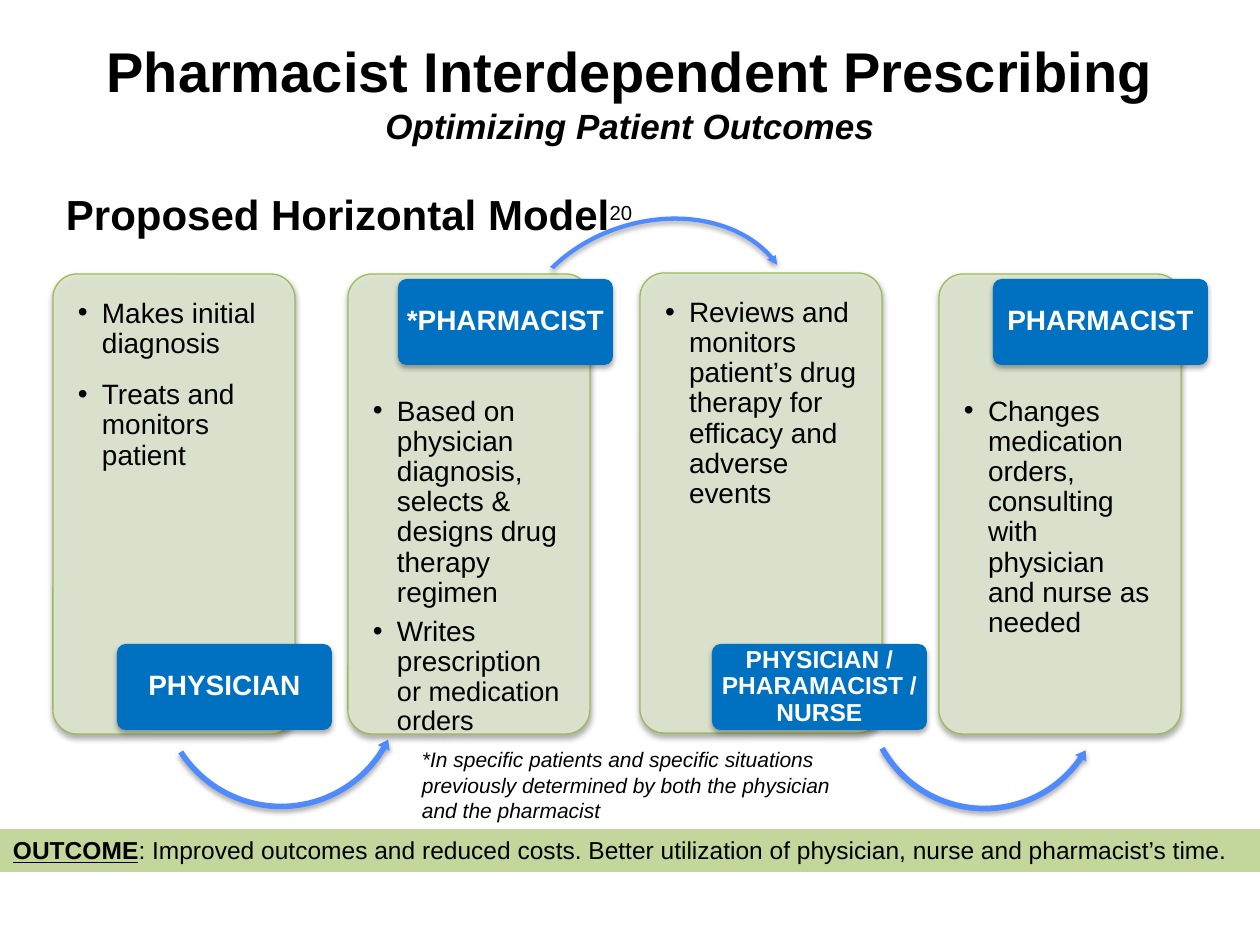
from dataclasses import dataclass

from lxml.etree import SubElement
from pptx import Presentation
from pptx.dml.color import RGBColor as RGB
from pptx.enum.shapes import MSO_SHAPE as SHAPE
from pptx.enum.text import MSO_ANCHOR as ANCHOR, MSO_AUTO_SIZE as AUTO, PP_ALIGN as ALIGN
from pptx.oxml.ns import qn
from pptx.util import Emu, Pt


@dataclass(frozen=True)
class Theme:
    """Colours, font and type sizes of the slide."""
    font: str = "Arial"
    ink: str = "000000"
    white: str = "FFFFFF"
    card: str = "DEE7D1"
    edge: str = "9BBB59"
    label: str = "0070C0"
    arrow: str = "4F8AFF"
    band: str = "C3D69B"
    title: float = 32
    heading: float = 24
    subtitle: float = 20
    body: float = 16
    tight: float = 15.5
    small: float = 14
    note: float = 12


T = Theme()
UP, DOWN = SHAPE.CIRCULAR_ARROW, SHAPE.LEFT_CIRCULAR_ARROW
STAGES = [
    dict(box=(53, 274, 242, 460), text_top=18, gap=12,
         bullets=[[("Makes initial diagnosis", T.body)], [("Treats and monitors patient", T.body)]],
         label=("PHYSICIAN", T.body, 64, 370),
         arrow=(DOWN, (102, 287, 252, 252), 19.4, (0.022, 2.676, 6.779, 76.593, 0.026))),
    dict(box=(348, 274, 242, 460), text_top=116, gap=5,
         bullets=[[("Based on physician diagnosis, selects & designs drug therapy regimen", T.body)],
                  [("Writes prescription ", T.body), ("or medication orders", T.tight)]],
         label=("*PHARMACIST", T.body, 50, 5),
         arrow=(UP, (160, -57, 292, 226), 342.6, (0.019, 2.289, 207.42, 137.219, 0.022))),
    dict(box=(640, 273, 242, 460), text_top=18, gap=0,
         bullets=[[("Reviews and monitors patient’s drug therapy for efficacy and adverse events", T.body)]],
         label=("PHYSICIAN / PHARAMACIST / NURSE", T.small, 72, 371),
         arrow=(DOWN, (221, 295, 247, 247), 23.8, (0.023, 2.727, 6.555, 76.318, 0.026))),
    dict(box=(939, 274, 242, 460), text_top=116, gap=0,
         bullets=[[("Changes medication orders, consulting with physician and nurse as needed", T.body)]],
         label=("PHARMACIST", T.body, 54, 5), arrow=None),
]


def px(n):
    """Turn slide pixels into EMU."""
    return Emu(round(n * 914400 / 126))


def apply(obj, fmt):
    """Set each format value on an object."""
    for name, value in fmt.items():
        setattr(obj, name, value)


def place(s, box):
    """Move a shape to a pixel box."""
    apply(s, dict(zip(("left", "top", "width", "height"), map(px, box))))


def frame(s, inset=(13, 6, 13, 6), anchor=ANCHOR.TOP):
    """Prepare the text frame of a shape."""
    tf = s.text_frame
    sides = ("margin_left", "margin_top", "margin_right", "margin_bottom")
    apply(tf, dict(zip(sides, map(px, inset)), word_wrap=True,
                   auto_size=AUTO.NONE, vertical_anchor=anchor))
    return tf


def add_run(p, text, size, color=T.ink, **fmt):
    """Add one formatted run to a paragraph."""
    r = p.add_run()
    r.text = text
    apply(r.font, dict(name=T.font, size=Pt(size), **fmt))
    r.font.color.rgb = RGB.from_string(color)
    return r


def add_solid(slide, kind, box, color, shadow=True):
    """Add a filled preset shape without an outline."""
    s = slide.shapes.add_shape(kind, *map(px, box))
    s.shadow.inherit = False
    s.fill.solid()
    s.fill.fore_color.rgb = RGB.from_string(color)
    s.line.fill.background()
    if shadow:
        effects = s._element.spPr.find(qn("a:effectLst"))
        outer = SubElement(effects, qn("a:outerShdw"), blurRad="40000", dist="23000",
                           dir="5400000", rotWithShape="0")
        black = SubElement(outer, qn("a:srgbClr"), val=T.ink)
        SubElement(black, qn("a:alpha"), val="35000")
    return s


def add_text(slide, box):
    """Add a text box and return its first paragraph."""
    return frame(slide.shapes.add_textbox(*map(px, box))).paragraphs[0]


def add_bullet(p):
    """Give a paragraph a hanging bullet."""
    pPr = p._p.get_or_add_pPr()
    pPr.set("marL", str(px(24)))
    pPr.set("indent", str(-px(24)))
    SubElement(pPr, qn("a:buFont"), typeface=T.font)
    SubElement(pPr, qn("a:buChar"), char="•")


def add_header(slide, box):
    """Place the title, subtitle and model heading."""
    x, y, w, h = box
    title = slide.shapes.title
    place(title, (x, y, w, 98))
    p = frame(title, anchor=ANCHOR.MIDDLE).paragraphs[0]
    p.alignment = ALIGN.CENTER
    add_run(p, "Pharmacist Interdependent Prescribing", T.title, bold=True)
    p = add_text(slide, (x, y + 77, w, 55))
    p.alignment = ALIGN.CENTER
    add_run(p, "Optimizing Patient Outcomes", T.subtitle, bold=True, italic=True)
    p = add_text(slide, (x + 53, y + 162, w - 126, 60))
    add_run(p, "Proposed Horizontal Model", T.heading, bold=True)
    r = add_run(p, "20", T.subtitle, bold=False)
    r._r.get_or_add_rPr().set("baseline", "30000")


def add_card(slide, box, text_top, gap, bullets):
    """Place a rounded card with its bullets."""
    s = add_solid(slide, SHAPE.ROUNDED_RECTANGLE, box, T.card)
    s.adjustments[0] = 0.1
    color = s._element.spPr.find(qn("a:solidFill"))[0]
    SubElement(color, qn("a:alpha"), val="90000")
    s.line.color.rgb = RGB.from_string(T.edge)
    s.line.width = Pt(0.75)
    tf = frame(s, (18, text_top, 18, 0))
    for i, runs in enumerate(bullets):
        p = tf.add_paragraph() if i else tf.paragraphs[0]
        add_bullet(p)
        apply(p, dict(alignment=ALIGN.LEFT, line_spacing=0.9, space_before=Pt(gap if i else 0)))
        for text, size in runs:
            add_run(p, text, size)


def add_stage(slide, box, text_top, gap, bullets, label, arrow):
    """Place a card, the arrow leaving it and its role label."""
    x, y = box[:2]
    add_card(slide, box, text_top, gap, bullets)
    if arrow:
        kind, (dx, dy, w, h), rotation, values = arrow
        s = add_solid(slide, kind, (x + dx, y + dy, w, h), T.arrow)
        s.rotation = rotation
        for i, value in enumerate(values):
            s.adjustments[i] = value
    text, size, dx, dy = label
    s = add_solid(slide, SHAPE.ROUNDED_RECTANGLE, (x + dx, y + dy, 215, 86), T.label)
    s.adjustments[0] = 0.1
    p = frame(s, (3, 3, 3, 3), ANCHOR.MIDDLE).paragraphs[0]
    apply(p, dict(alignment=ALIGN.CENTER, line_spacing=0.9))
    add_run(p, text, size, T.white, bold=True)


def add_footer(slide, box):
    """Place the footnote and the outcome band."""
    x, y, w, h = box
    p = add_text(slide, (x + 409, y, 441, 89))
    add_run(p, "*In specific patients and specific situations previously determined "
               "by both the physician and the pharmacist", T.note, italic=True)
    s = add_solid(slide, SHAPE.RECTANGLE, (x, y + 88, w, h - 88), T.band, shadow=False)
    p = frame(s).paragraphs[0]
    p.alignment = ALIGN.LEFT
    add_run(p, "OUTCOME", T.small, bold=True, underline=True)
    add_run(p, ": Improved outcomes and reduced costs. Better utilization of physician, "
               "nurse and pharmacist’s time.", T.small)


def main():
    """Build the slide and save it."""
    prs = Presentation()
    apply(prs, dict(slide_width=px(1260), slide_height=px(945)))
    slide = prs.slides.add_slide(prs.slide_layouts[5])
    add_header(slide, (0, 21, 1260, 222))
    for stage in STAGES:
        add_stage(slide, **stage)
    add_footer(slide, (0, 741, 1260, 131))
    prs.save("out.pptx")


if __name__ == "__main__":
    main()
